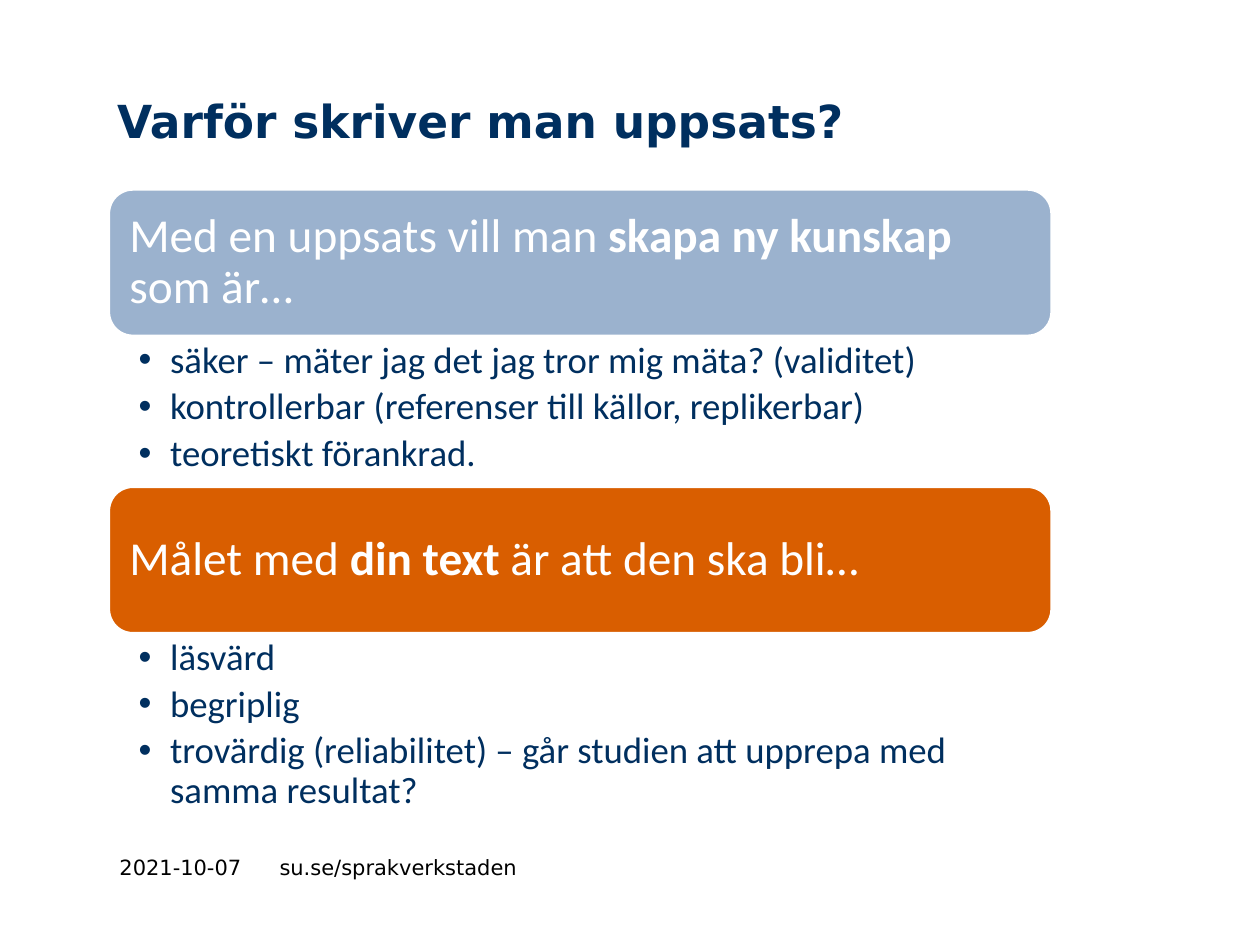
from dataclasses import dataclass

from lxml.etree import SubElement
from pptx import Presentation
from pptx.dml.color import RGBColor
from pptx.enum.shapes import MSO_SHAPE
from pptx.enum.text import MSO_ANCHOR, MSO_AUTO_SIZE, PP_ALIGN
from pptx.oxml.ns import qn
from pptx.util import Inches, Pt

COLUMNS, ROWS = 40, 30
LEFT, WIDTH = 3.44, 29.96
HEADING_ROWS = 4.68

SECTIONS = [
    ("9BB2CE",
     [("Med en uppsats vill man ", False), ("skapa ny kunskap ", True), ("som är…", False)],
     ["säker – mäter jag det jag tror mig mäta? (validitet)",
      "kontrollerbar (referenser till källor, replikerbar)",
      "teoretiskt förankrad."],
     4.76),
    ("D95E00",
     [("Målet med ", False), ("din text ", True), ("är att den ska bli…", False)],
     ["läsvärd",
      "begriplig",
      "trovärdig (reliabilitet) – går studien att upprepa med samma resultat?"],
     6.12),
]


def color(value):
    return RGBColor.from_string(value)


@dataclass
class SlideBuilder:
    presentation: object
    slide: object
    navy: str = "002F5F"
    white: str = "FFFFFF"
    black: str = "000000"
    display_font: str = "DejaVu Sans"
    body_font: str = "Calibri"

    def box(self, left, top, width, height):
        """Turn grid columns and rows into slide lengths."""
        column = self.presentation.slide_width / COLUMNS
        row = self.presentation.slide_height / ROWS
        return [round(length) for length in
                (left * column, top * row, width * column, height * row)]

    def place(self, shape, *grid):
        shape.left, shape.top, shape.width, shape.height = self.box(*grid)

    def frame(self, shape, anchor, insets=(0.1, 0.05, 0.1, 0.05)):
        """Prepare the text frame of a shape; insets run left, top, right, bottom."""
        frame = shape.text_frame
        frame.word_wrap = True
        frame.auto_size = MSO_AUTO_SIZE.NONE
        frame.vertical_anchor = anchor
        (frame.margin_left, frame.margin_top,
         frame.margin_right, frame.margin_bottom) = map(Inches, insets)
        return frame

    def add_runs(self, paragraph, runs, font, size, text_color):
        paragraph.alignment = PP_ALIGN.LEFT
        for text, bold in runs:
            run = paragraph.add_run()
            run.text = text
            run.font.name, run.font.size, run.font.bold = font, Pt(size), bold
            run.font.color.rgb = color(text_color)

    def title(self, text, *grid):
        shape = self.slide.shapes.title
        self.place(shape, *grid)
        frame = self.frame(shape, MSO_ANCHOR.MIDDLE)
        self.add_runs(frame.paragraphs[0], [(text, True)], self.display_font, 26, self.navy)

    def heading(self, runs, fill, *grid):
        shape = self.slide.shapes.add_shape(MSO_SHAPE.ROUNDED_RECTANGLE, *self.box(*grid))
        shape.shadow.inherit = False
        shape.fill.solid()
        shape.fill.fore_color.rgb = color(fill)
        shape.line.color.rgb = color(self.white)
        shape.line.width = Pt(2)
        frame = self.frame(shape, MSO_ANCHOR.MIDDLE, (0.11,) * 4)
        paragraph = frame.paragraphs[0]
        paragraph.line_spacing = 0.9
        self.add_runs(paragraph, runs, self.body_font, 27, self.white)

    def bullets(self, placeholder, items, *grid):
        self.place(placeholder, *grid)
        frame = self.frame(placeholder, MSO_ANCHOR.TOP, (0.24, 0.04, 0.21, 0.04))
        for index, item in enumerate(items):
            paragraph = frame.add_paragraph() if index else frame.paragraphs[0]
            properties = paragraph._p.get_or_add_pPr()
            properties.set("marL", str(Inches(0.25)))
            properties.set("indent", str(Inches(-0.25)))
            SubElement(properties, qn("a:buChar")).set("char", "•")
            paragraph.level = 1
            paragraph.line_spacing = 0.9
            paragraph.space_before, paragraph.space_after = Pt(0), Pt(4)
            self.add_runs(paragraph, [(item, False)], self.body_font, 21, self.navy)

    def footer(self, text, anchor, *grid):
        shape = self.slide.shapes.add_textbox(*self.box(*grid))
        frame = self.frame(shape, anchor)
        self.add_runs(frame.paragraphs[0], [(text, False)], self.display_font, 12, self.black)


def main():
    presentation = Presentation()
    presentation.slide_width, presentation.slide_height = Inches(10), Inches(7.5)
    two_content = presentation.slide_layouts[3]
    slide = presentation.slides.add_slide(two_content)
    builder = SlideBuilder(presentation, slide)

    builder.title("Varför skriver man uppsats?", 3.32, 2.72, WIDTH, 2.2)
    top = 6
    for number, (fill, heading, items, list_rows) in enumerate(SECTIONS, start=1):
        builder.heading(heading, fill, LEFT, top, WIDTH, HEADING_ROWS)
        top += HEADING_ROWS
        builder.bullets(slide.placeholders[number], items, LEFT, top, WIDTH, list_rows)
        top += list_rows
    builder.footer("2021-10-07", MSO_ANCHOR.MIDDLE, 3.4, 26.92, 4.92, 1.24)
    builder.footer("su.se/sprakverkstaden", MSO_ANCHOR.TOP, 8.48, 26.92, 19.64, 2.28)
    presentation.save("out.pptx")


if __name__ == "__main__":
    main()
